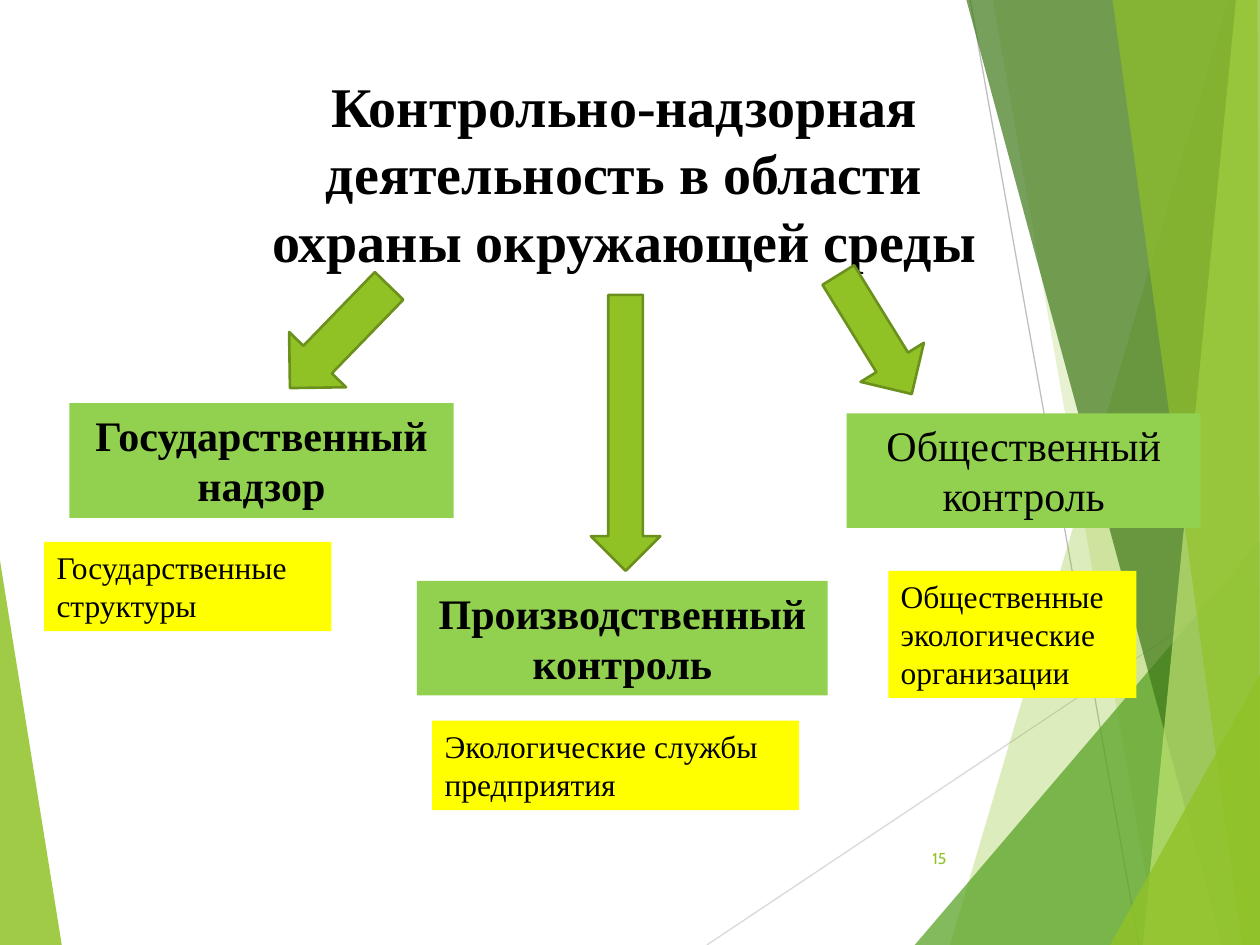
from dataclasses import dataclass

from pptx import Presentation
from pptx.dml.color import RGBColor
from pptx.enum.shapes import MSO_CONNECTOR, MSO_SHAPE
from pptx.enum.text import MSO_ANCHOR, PP_ALIGN
from pptx.oxml.ns import qn
from pptx.oxml.xmlchemy import OxmlElement
from pptx.util import Inches, Pt

COLS, ROWS = 100, 75


@dataclass(frozen=True)
class Theme:
    """Colours, fonts and type sizes of the slide."""
    lime: str = "90C226"
    leaf: str = "54A021"
    moss: str = "3F7819"
    pale: str = "C0E474"
    edge: str = "6B901C"
    head: str = "92D050"
    note: str = "FFFF00"
    ink: str = "000000"
    light: str = "D9D9D9"
    grey: str = "BFBFBF"
    serif: str = "Times New Roman"
    sans: str = "Cabin"
    title: int = 32
    large: int = 24
    body: int = 18
    small: int = 9


THEME = Theme()


def grid(*cells):
    """Turn grid cells, each a tenth of an inch, into lengths."""
    return [Inches(cell / 10) for cell in cells]


def paint(shape, color, alpha=100):
    """Fill a shape with a colour and remove its shadow."""
    shape.shadow.inherit = False
    shape.fill.solid()
    shape.fill.fore_color.rgb = RGBColor.from_string(color)
    if alpha < 100:
        node = OxmlElement("a:alpha")
        node.set("val", str(alpha * 1000))
        shape.element.spPr.find(".//" + qn("a:srgbClr")).append(node)


def write(shape, text, size=THEME.body, font=THEME.serif, color=THEME.ink,
          bold=False, align=PP_ALIGN.LEFT, anchor=MSO_ANCHOR.TOP):
    """Put formatted text into a shape."""
    frame = shape.text_frame
    frame.word_wrap = True
    frame.vertical_anchor = anchor
    para = frame.paragraphs[0]
    para.alignment = align
    run = para.add_run()
    run.text = text
    run.font.size = Pt(size)
    run.font.name = font
    run.font.bold = bold
    run.font.color.rgb = RGBColor.from_string(color)


def label(slide, area, text, **form):
    """Add a plain text box."""
    write(slide.shapes.add_textbox(*grid(*area)), text, **form)


def box(slide, area, text, fill, **form):
    """Add a filled rectangle with text."""
    shape = slide.shapes.add_shape(MSO_SHAPE.RECTANGLE, *grid(*area))
    paint(shape, fill)
    shape.line.fill.background()
    write(shape, text, **form)


def arrow(slide, area, turn=0):
    """Add a turned block arrow."""
    shape = slide.shapes.add_shape(MSO_SHAPE.DOWN_ARROW, *grid(*area))
    paint(shape, THEME.lime)
    shape.line.color.rgb = RGBColor.from_string(THEME.edge)
    shape.line.width = Pt(1.5)
    shape.rotation = turn


def facet(slide, points, color, alpha):
    """Add a see-through polygon."""
    start, *rest = [grid(*point) for point in points]
    pen = slide.shapes.build_freeform(*start, scale=1.0)
    pen.add_line_segments(rest, close=True)
    shape = pen.convert_to_shape()
    paint(shape, color, alpha)
    shape.line.fill.background()


def ray(slide, ends, color):
    """Add a thin straight line."""
    line = slide.shapes.add_connector(MSO_CONNECTOR.STRAIGHT, *grid(*ends))
    line.line.color.rgb = RGBColor.from_string(color)
    line.line.width = Pt(0.75)
    line.element.spPr.append(OxmlElement("a:effectLst"))


def decor(slide):
    """Draw the faceted backdrop."""
    end, base = (COLS, 0), (COLS, ROWS)
    facet(slide, [(0, 44.5), (4.9, ROWS), (0, ROWS)], THEME.lime, 85)
    ray(slide, (56.1, ROWS, COLS, 45.7), THEME.light)
    ray(slide, (77, 0, 90.4, ROWS), THEME.grey)
    for points, color, alpha in (
        ([(97.5, 0), (75.4, ROWS), base, end], THEME.lime, 30),
        ([(78.8, 0), (91.9, ROWS), base, end], THEME.lime, 20),
        ([(72.6, ROWS), (COLS, 42.9), base], THEME.leaf, 72),
        ([(76.7, 0), (97, ROWS), base, end], THEME.moss, 70),
        ([(98.1, 0), (90.7, ROWS), base, end], THEME.pale, 70),
        ([(88.3, 0), (98.6, ROWS), base, (99.8, 0)], THEME.lime, 65),
        ([(88.1, ROWS), (COLS, 53.5), base], THEME.lime, 80),
    ):
        facet(slide, points, color, alpha)


def main():
    """Build and save the slide."""
    deck = Presentation()
    deck.slide_width, deck.slide_height = grid(COLS, ROWS)
    slide = deck.slides.add_slide(deck.slide_layouts[6])
    decor(slide)
    label(slide, (18.7, 5.2, 61.7, 17.2),
          "Контрольно-надзорная деятельность в области охраны окружающей среды",
          size=THEME.title, bold=True, align=PP_ALIGN.CENTER)
    for area, text, bold in (
        ((5.5, 32, 30.5, 9.1), "Государственный надзор", True),
        ((67.2, 32.8, 28.1, 9.1), "Общественный контроль", False),
        ((33.1, 46.1, 32.6, 9.1), "Производственный контроль", True),
    ):
        box(slide, area, text, THEME.head, size=THEME.large, bold=bold,
            align=PP_ALIGN.CENTER)
    arrow(slide, (23.8, 21.1, 6.3, 11.3), 44.1)
    arrow(slide, (46.9, 23.4, 5.5, 21.9))
    arrow(slide, (66.5, 21, 5.9, 11.1), 328.3)
    label(slide, (70.5, 66.1, 5.6, 4), "15", size=THEME.small,
          font=THEME.sans, color=THEME.lime, align=PP_ALIGN.RIGHT,
          anchor=MSO_ANCHOR.MIDDLE)
    for area, text in (
        ((3.5, 43, 22.8, 7.1), "Государственные структуры"),
        ((34.3, 57.2, 29.1, 7.1), "Экологические службы предприятия"),
        ((70.5, 45.3, 19.7, 10.1), "Общественные экологические организации"),
    ):
        box(slide, area, text, THEME.note)
    deck.save("out.pptx")


if __name__ == "__main__":
    main()
